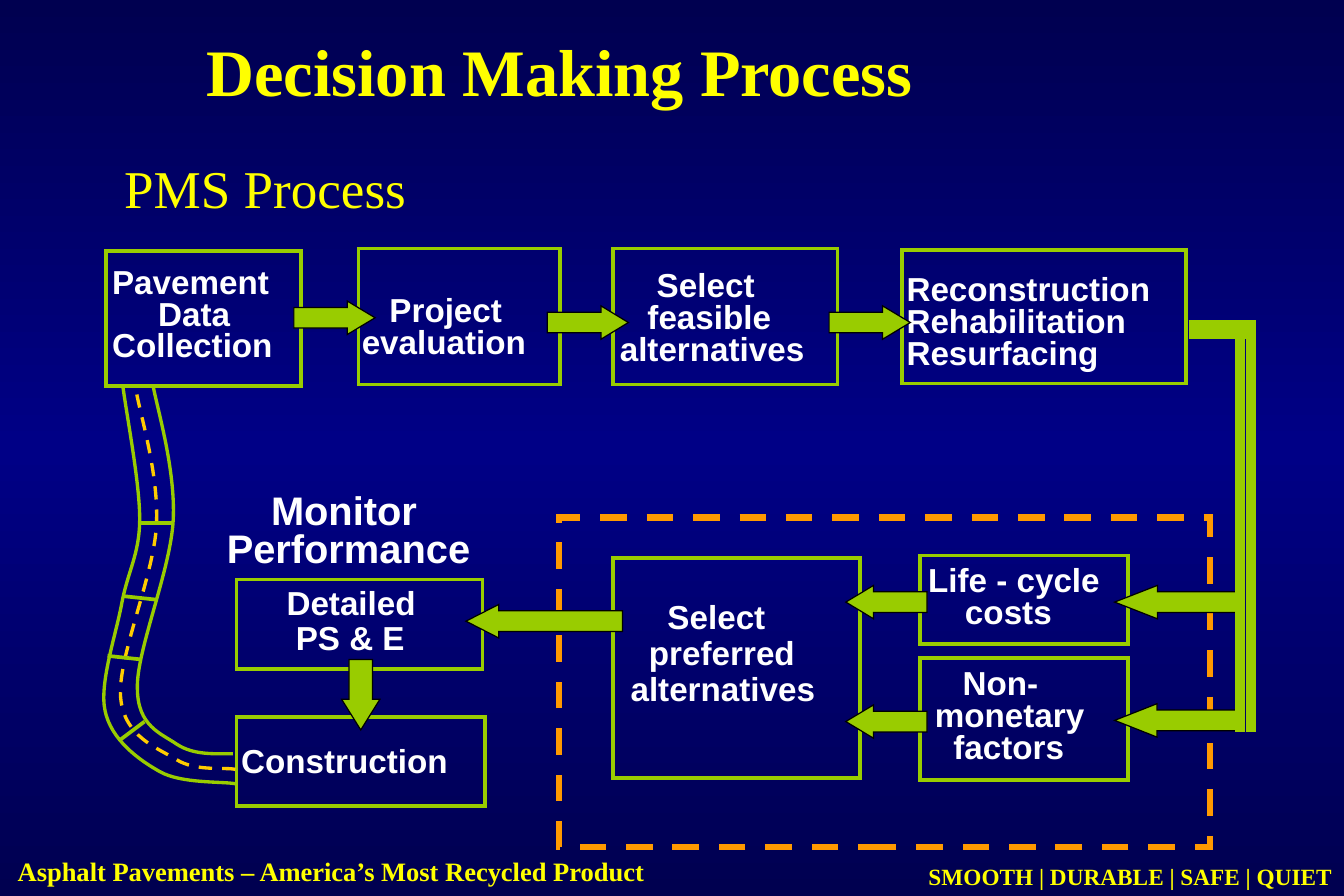
from copy import deepcopy

from lxml import etree
from pptx import Presentation
from pptx.dml.color import RGBColor
from pptx.enum.dml import MSO_LINE
from pptx.enum.shapes import MSO_CONNECTOR, MSO_SHAPE
from pptx.enum.text import MSO_ANCHOR, PP_ALIGN
from pptx.oxml.ns import qn

PX = 9144  # 100 px to the inch
SPACE_WIDTH = 0.278  # width of one Arial space, in parts of the text size

RECTANGLE, STRAIGHT = MSO_SHAPE.RECTANGLE, MSO_CONNECTOR.STRAIGHT
RIGHT, LEFT, DOWN = MSO_SHAPE.RIGHT_ARROW, MSO_SHAPE.LEFT_ARROW, MSO_SHAPE.DOWN_ARROW
DASH = MSO_LINE.DASH
ALIGN_LEFT, ALIGN_CENTER, ALIGN_RIGHT = PP_ALIGN.LEFT, PP_ALIGN.CENTER, PP_ALIGN.RIGHT
MIDDLE = MSO_ANCHOR.MIDDLE

NAVY = RGBColor(0x00, 0x00, 0x50)
BLUE = RGBColor(0x00, 0x00, 0x86)
GREEN = RGBColor(0x99, 0xCC, 0x00)
ORANGE = RGBColor(0xFF, 0x99, 0x00)
AMBER = RGBColor(0xFF, 0xCC, 0x00)
YELLOW = RGBColor(0xFF, 0xFF, 0x00)
WHITE = RGBColor(0xFF, 0xFF, 0xFF)
BLACK = RGBColor(0x00, 0x00, 0x00)

HEADING = {"name": "Times New Roman", "bold": True}
HEADING_LIGHT = {"name": "Times New Roman", "bold": False}
LABEL = {"name": "Arial", "bold": True}

STEP_BOXES = [
    (89, 210, 163, 113), (300, 208, 169, 114), (513, 208, 188, 114),
    (755, 209, 238, 112), (770, 465, 174, 74), (770, 551, 174, 102),
    (513, 467, 207, 184), (198, 485, 206, 75), (198, 600, 208, 75),
]
# place, text size, line spacing, lines as (indent in spaces, text)
STEP_LABELS = [
    ((84, 220, 156, 91), 20, 0.8, [(0, "Pavement"), (5, "Data"), (0, "Collection")]),
    ((293, 244, 159, 64), 20, 0.8, [(3, "Project"), (0, "evaluation")]),
    ((509, 223, 176, 91), 20, 0.8, [(4, "Select"), (3, "feasible"), (0, "alternatives")]),
    ((749, 226, 254, 91), 20, 0.8,
     [(0, "Reconstruction"), (0, "Rehabilitation"), (0, "Resurfacing")]),
    ((767, 470, 165, 64), 20, 0.8, [(0, "Life - cycle"), (4, "costs")]),
    ((765, 556, 154, 91), 20, 0.8, [(4, "Non-"), (1, "monetary"), (3, "factors")]),
    ((518, 498, 176, 101), 20, 0.9, [(4, "Select"), (2, "preferred"), (0, "alternatives")]),
    ((230, 486, 129, 71), 20, 0.9, [(0, "Detailed"), (1, "PS & E")]),
    ((192, 615, 195, 44), 20, 1.0, [(0, "Construction")]),
    ((180, 409, 226, 75), 24, 0.8, [(4, "Monitor"), (0, "Performance")]),
]
# direction, place, head length
ARROWS = [
    (RIGHT, (246, 252, 68, 28), 0.83), (RIGHT, (458, 256, 68, 28), 0.82),
    (RIGHT, (694, 256, 68, 28), 0.83), (LEFT, (933, 589, 105, 28), 1.27),
    (LEFT, (933, 490, 105, 28), 1.28), (LEFT, (708, 490, 68, 28), 0.83),
    (LEFT, (708, 590, 68, 28), 0.83), (LEFT, (390, 506, 131, 28), 0.98),
    (DOWN, (286, 552, 32, 59), 0.8),
]
# Bezier chains: start, then two handles and an end for each segment
ROAD_EDGES = [
    [(195, 631), (178, 631), (162, 632), (148, 623), (135, 614), (115, 608), (115, 576),
     (114, 545), (143, 477), (145, 435), (147, 392), (131, 340), (128, 322)],
    [(197, 656), (186, 654), (152, 656), (134, 646), (116, 636), (93, 619), (88, 595),
     (83, 572), (97, 532), (102, 505), (107, 478), (117, 464), (117, 434),
     (117, 404), (106, 347), (103, 324)],
]
ROAD_CENTRE = [
    (197, 644), (189, 642), (164, 646), (148, 636), (132, 626), (104, 617), (101, 584),
    (98, 551), (129, 482), (131, 439), (133, 396), (117, 346), (114, 327)]
ROAD_JOINTS = [(101, 619, 121, 604), (90, 549, 118, 552),
               (103, 499, 131, 502), (116, 438, 145, 438)]
RETURN_PIPE = [(995, 280, 1047, 280), (1038, 268, 1038, 613),
               (1047, 268, 1047, 613), (995, 272, 1047, 272)]


def emu(lengths):
    return [length * PX for length in lengths]


def set_background(slide):
    fill = slide.background.fill
    fill.gradient()
    fill.gradient_angle = 270
    stops = slide.element.find(".//" + qn("a:gsLst"))
    stops.insert(1, deepcopy(stops[0]))
    for stop, position, color in zip(fill.gradient_stops, (0, 0.5, 1), (NAVY, BLUE, NAVY)):
        stop.position = position
        stop.color.rgb = color


def set_line(line, color, width, dash=None):
    line.color.rgb = color
    line.width = round(width * 12700)
    if dash:
        line.dash_style = dash


def add_preset(slide, preset, place, color, width, dash=None):
    """Add an unfilled preset shape with sharp corners."""
    shape = slide.shapes.add_shape(preset, *emu(place))
    shape.shadow.inherit = False
    shape.fill.background()
    set_line(shape.line, color, width, dash)
    etree.SubElement(shape.element.find(".//" + qn("a:ln")), qn("a:miter"), lim="800000")
    return shape


def add_arrow(slide, direction, place, head):
    shape = add_preset(slide, direction, place, BLACK, 0.75)
    shape.adjustments[0] = 0.62
    shape.adjustments[1] = head
    shape.fill.solid()
    shape.fill.fore_color.rgb = GREEN


def add_line(slide, ends, width):
    connector = slide.shapes.add_connector(STRAIGHT, *emu(ends))
    set_line(connector.line, GREEN, width)
    etree.SubElement(connector._element.spPr, qn("a:effectLst"))


def add_curve(slide, chain, color, dash=None):
    """Add a freeform whose points are joined, three by three, into Bezier segments."""
    start, *others = chain
    builder = slide.shapes.build_freeform(*start, scale=PX)
    builder.add_line_segments(others, close=False)
    shape = builder.convert_to_shape()
    shape.shadow.inherit = False
    shape.fill.background()
    set_line(shape.line, color, 2, dash)
    segments = list(shape.element.iter(qn("a:lnTo")))
    for first in range(0, len(segments), 3):
        curve = etree.Element(qn("a:cubicBezTo"))
        segments[first].addprevious(curve)
        for segment in segments[first:first + 3]:
            curve.append(segment[0])
            segment.getparent().remove(segment)


def add_text(slide, place, lines, size, style=HEADING, color=YELLOW,
             align=ALIGN_LEFT, spacing=1.0, wrap=True):
    """Add a text box; each line is (indent in spaces, text)."""
    frame = slide.shapes.add_textbox(*emu(place)).text_frame
    frame.word_wrap = wrap
    for index, (indent, text) in enumerate(lines):
        paragraph = frame.add_paragraph() if index else frame.paragraphs[0]
        paragraph.alignment = align
        paragraph.line_spacing = spacing
        if indent:
            margin = round(indent * SPACE_WIDTH * size * 12700)
            paragraph._p.get_or_add_pPr().set("marL", str(margin))
        run = paragraph.add_run()
        run.text = text
        for name, value in style.items():
            setattr(run.font, name, value)
        run.font.size = size * 12700
        run.font.color.rgb = color
    return frame


def main():
    presentation = Presentation()
    presentation.slide_width, presentation.slide_height = emu((1125, 750))
    slide = presentation.slides.add_slide(presentation.slide_layouts[6])
    set_background(slide)

    add_text(slide, (0, 711, 638, 37),
             [(0.8, "Asphalt Pavements – America’s Most Recycled Product")], 16)
    # En spaces surround the bars
    add_text(slide, (721, 717, 404, 34), [(0, "SMOOTH | DURABLE | SAFE | QUIET")], 14,
             align=ALIGN_RIGHT)
    add_text(slide, (94, 125, 562, 63), [(0, "PMS Process")], 32, HEADING_LIGHT)

    for place in STEP_BOXES:
        add_preset(slide, RECTANGLE, place, GREEN, 2.25)
    for place, size, spacing, lines in STEP_LABELS:
        add_text(slide, place, lines, size, LABEL, WHITE, spacing=spacing, wrap=False)
    add_preset(slide, RECTANGLE, (468, 433, 545, 276), ORANGE, 4, DASH)

    for edge in ROAD_EDGES:
        add_curve(slide, edge, GREEN)
    add_curve(slide, ROAD_CENTRE, AMBER, DASH)
    for ends in ROAD_JOINTS:
        add_line(slide, ends, 2.25)
    for direction, place, head in ARROWS:
        add_arrow(slide, direction, place, head)
    for ends in RETURN_PIPE:
        add_line(slide, ends, 6)

    title = add_text(slide, (0, 0, 937, 117), [(0, "Decision Making Process")], 40,
                     align=ALIGN_CENTER)
    title.vertical_anchor = MIDDLE

    presentation.save("out.pptx")


if __name__ == "__main__":
    main()
